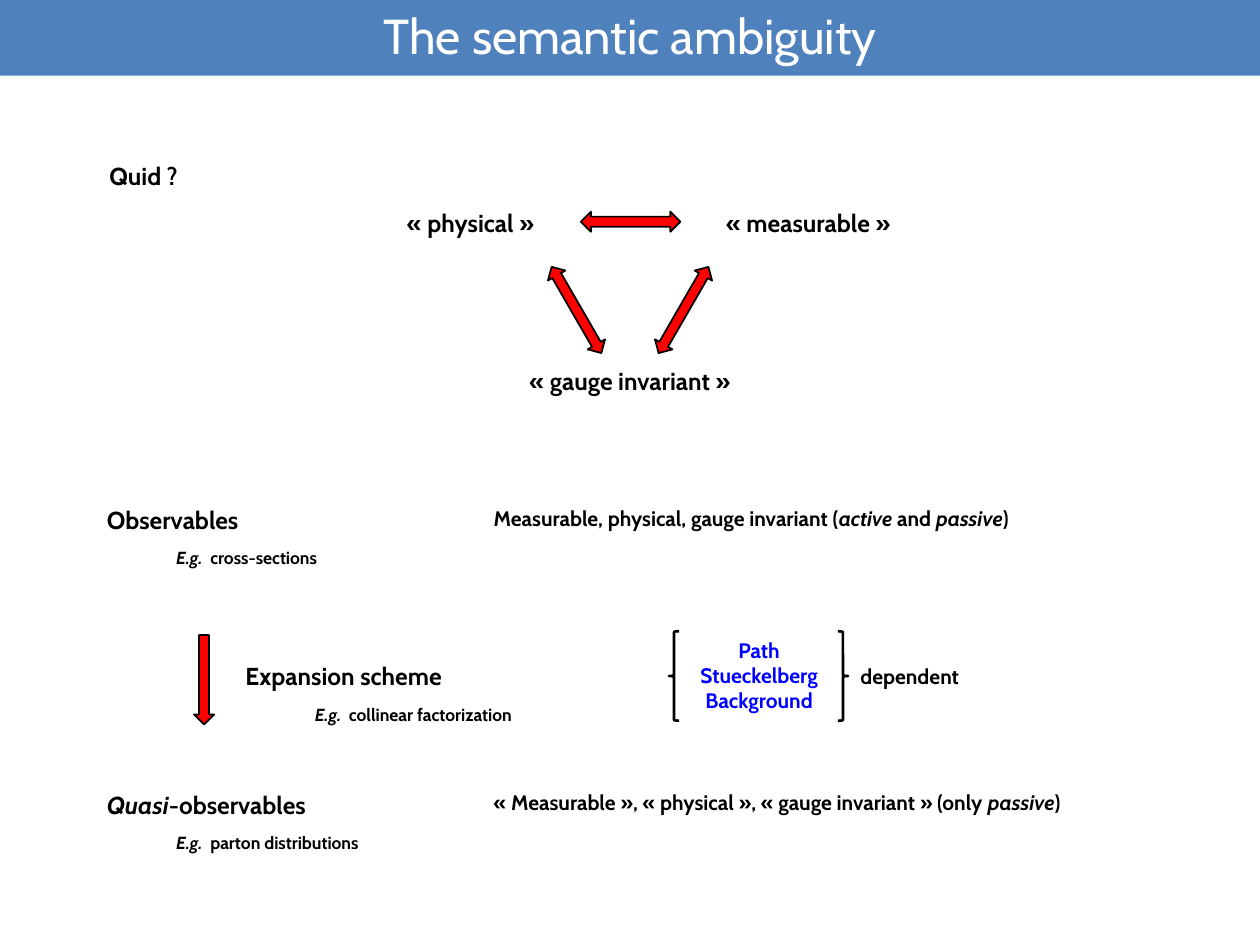
"""Build the slide on the semantic ambiguity, on a grid of 100 columns by 75 rows."""
import pptx
import pptx.util
import pptx.dml.color
import pptx.enum.shapes
import pptx.enum.text

Kind = pptx.enum.shapes.MSO_SHAPE
Side = pptx.enum.text.PP_ALIGN
BLACK, WHITE, RED, BLUE, BAND = "000000", "FFFFFF", "FF0000", "0000FF", "4F81BD"

deck = pptx.Presentation()
deck.slide_width = pptx.util.Inches(10)
deck.slide_height = pptx.util.Inches(7.5)
col, row = deck.slide_width / 100, deck.slide_height / 75
slide = deck.slides.add_slide(deck.slide_layouts[5])


def write(text, x, y, w, h, size=14, tint=BLACK, bold=True, align=Side.LEFT, box=None):
    """Write lines of text, with italics between asterisks."""
    box = box or slide.shapes.add_textbox(0, 0, 0, 0)
    box.left, box.top = round(x * col), round(y * row)
    box.width, box.height = round(w * col), round(h * row)
    frame = box.text_frame
    frame.word_wrap = True
    frame.auto_size = pptx.enum.text.MSO_AUTO_SIZE.NONE
    for i, line in enumerate(text.split("\n")):
        para = frame.add_paragraph() if i else frame.paragraphs[0]
        para.alignment = align
        for j, part in enumerate(line.split("*")):
            if part:
                run = para.add_run()
                run.text = part
                font = run.font
                font.name, font.size = "Cabin", pptx.util.Pt(size)
                font.bold, font.italic = bold, j % 2 == 1
                font.color.rgb = pptx.dml.color.RGBColor.from_string(tint)
    return box


def draw(kind, x, y, w, h, fill=None, line=None, turn=0):
    """Draw a preset shape with an optional fill, line width and rotation."""
    shape = slide.shapes.add_shape(
        kind, round(x * col), round(y * row), round(w * col), round(h * row))
    shape.shadow.inherit = False
    shape.rotation = turn
    if fill:
        shape.fill.solid()
        shape.fill.fore_color.rgb = pptx.dml.color.RGBColor.from_string(fill)
    else:
        shape.fill.background()
    if line:
        shape.line.width = pptx.util.Pt(line)
        shape.line.color.rgb = pptx.dml.color.RGBColor.from_string(BLACK)
    else:
        shape.line.fill.background()
    return shape


band = draw(Kind.RECTANGLE, 0, 0, 100, 6, fill=BAND)
title = slide.shapes.title
write("The semantic ambiguity", 0, 0, 100, 5.5, size=28, tint=WHITE, bold=False,
      align=Side.CENTER, box=title)
title.text_frame.vertical_anchor = pptx.enum.text.MSO_ANCHOR.MIDDLE
title.element.addprevious(band.element)

write("Quid ?", 7.7, 12.3, 8.4, 3.4)
for text, x, y, w in [("« physical »", 29.5, 16, 15.7),
                      ("« measurable »", 54.7, 16, 18.9),
                      ("« gauge invariant »", 37.4, 28.6, 25.2)]:
    write(text, x, y, w, 3.4, align=Side.CENTER)
for x, y, turn in [(46.1, 16.8, 0), (50.3, 23.8, 300), (41.8, 23.8, 60)]:
    draw(Kind.LEFT_RIGHT_ARROW, x, y, 7.9, 1.6, fill=RED, line=1, turn=turn)

for head, case, x, y in [("Observables", "cross-sections", 7.5, 39.6),
                         ("Expansion scheme", "collinear factorization", 18.5, 52),
                         ("*Quasi*-observables", "parton distributions", 7.5, 62.2)]:
    write(head, x, y, 32, 3.4)
    write(f"*E.g.  *{case}", x + 5.5, y + 3.35, 22.8, 2.7, size=10)

for text, y in [
        ("Measurable, physical, gauge invariant (*active* and *passive*)", 39.6),
        ("« Measurable », « physical », « gauge invariant » (only *passive*)", 62.2)]:
    write(text, 38.2, y, 60.6, 3, size=12)

draw(Kind.DOWN_ARROW, 15.4, 50.4, 1.6, 7.1, fill=RED, line=1)
for x, turn in [(53.1, 0), (66.5, 180)]:
    draw(Kind.LEFT_BRACE, x, 50.1, 0.8, 7.1, line=1.5, turn=turn)
write("Path\nStueckelberg\nBackground", 50.8, 50.1, 18.9, 7.1, size=12, tint=BLUE,
      align=Side.CENTER)
write("dependent", 67.3, 52.2, 13.4, 3, size=12)

deck.save("out.pptx")
